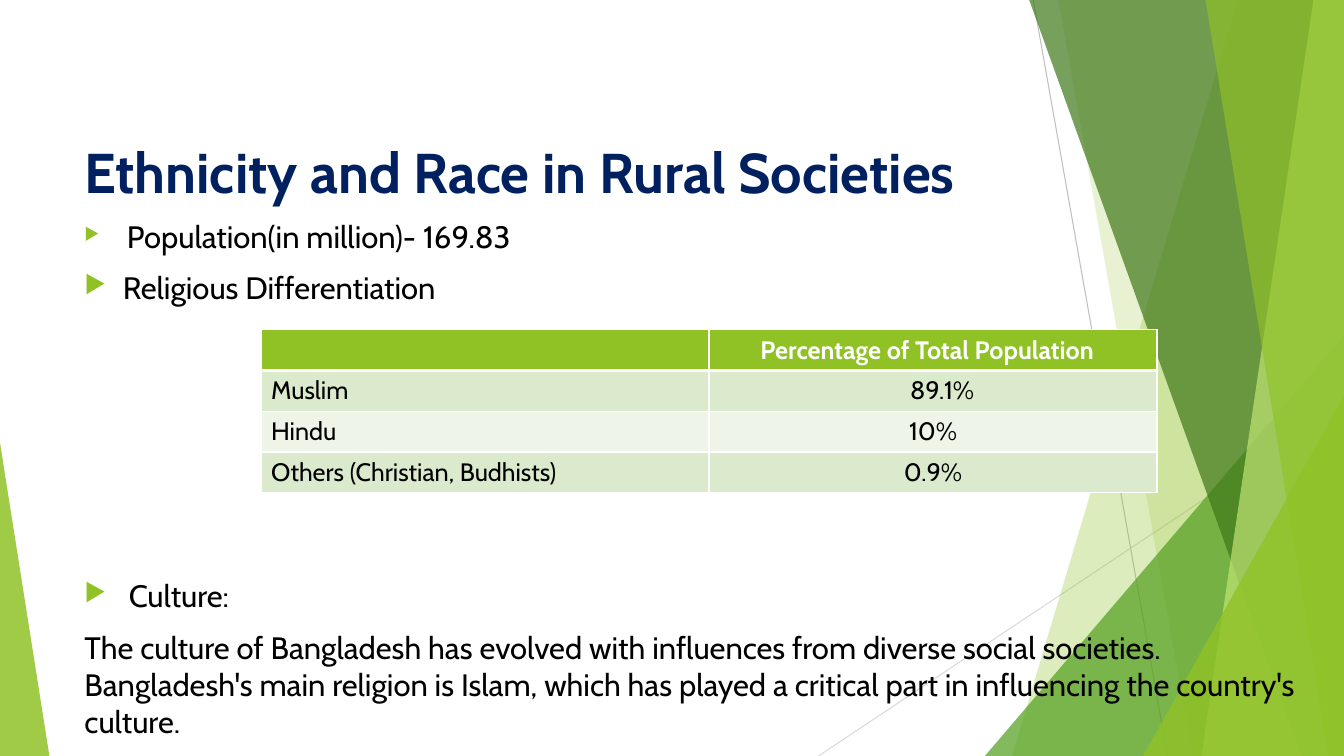
from dataclasses import dataclass

from lxml import etree
from pptx import Presentation
from pptx.dml.color import RGBColor
from pptx.enum.shapes import MSO_CONNECTOR, MSO_SHAPE
from pptx.enum.text import MSO_ANCHOR, PP_ALIGN
from pptx.oxml.ns import qn
from pptx.util import Emu, Inches, Pt

STRAIGHT = MSO_CONNECTOR.STRAIGHT
TRIANGLE = MSO_SHAPE.ISOSCELES_TRIANGLE
MIDDLE = MSO_ANCHOR.MIDDLE
LEFT, CENTER = PP_ALIGN.LEFT, PP_ALIGN.CENTER

FONT = "Cabin"
WHITE = RGBColor(0xFF, 0xFF, 0xFF)
BLACK = RGBColor(0x00, 0x00, 0x00)
NAVY = RGBColor(0x00, 0x20, 0x60)
LIME = RGBColor(0x90, 0xC2, 0x26)
GREEN = RGBColor(0x54, 0xA0, 0x21)
FOREST = RGBColor(0x3F, 0x78, 0x19)
PALE_LIME = RGBColor(0xC0, 0xE4, 0x74)
GREY = RGBColor(0xBF, 0xBF, 0xBF)
LIGHT_GREY = RGBColor(0xD9, 0xD9, 0xD9)
ROW_TINTS = (RGBColor(0xDB, 0xE9, 0xCD), RGBColor(0xEE, 0xF4, 0xE8))

SLIDE_WIDTH, SLIDE_HEIGHT = Inches(13.333), Inches(7.5)
TEXT_LEFT, TEXT_WIDTH = 5.55, 91.65
BODY_SIZE = 22.1


def across(share: float) -> Emu:
    """Percentage of the slide's width."""
    return Emu(round(SLIDE_WIDTH * share / 100))


def down(share: float) -> Emu:
    """Percentage of the slide's height."""
    return Emu(round(SLIDE_HEIGHT * share / 100))


@dataclass
class Ray:
    start: tuple[float, float]
    end: tuple[float, float]
    color: RGBColor


@dataclass
class Band:
    """Full-height strip from a slanted left edge to the slide's right side."""
    head: float
    foot: float
    color: RGBColor
    opacity: int


@dataclass
class Corner:
    """Right triangle standing on the slide's bottom edge."""
    left: float
    top: float
    width: float
    tip: float
    color: RGBColor
    opacity: int


@dataclass
class Line:
    text: str
    size: float = BODY_SIZE
    color: RGBColor = BLACK
    bold: bool = False
    indent: float = 0
    bullet: int = 0


@dataclass
class CellText:
    text: str
    align: PP_ALIGN = LEFT
    margin: float = 0.1


RAYS = [Ray((76.88, 0), (86.87, 100), GREY),
        Ray((100, 53.73), (60.9, 100), LIGHT_GREY)]
FACETS = [
    Band(92.1, 75.3, LIME, 30),
    Band(78.75, 88.73, LIME, 20),
    Corner(73.28, 44.4, 26.72, 1, GREEN, 72),
    Band(76.58, 96.83, FOREST, 70),
    Band(97.73, 89.4, PALE_LIME, 70),
    Band(89.7, 98.85, LIME, 65),
    Corner(85.05, 52.4, 14.95, 1, LIME, 80),
    Corner(0, 58.53, 3.68, 0, LIME, 85),
]
TITLE = [Line("Ethnicity and Race in Rural Societies", 40, NAVY, True)]
POPULATION = [Line("Population(in million)- 169.83", indent=0.42, bullet=55),
              Line("Religious Differentiation", indent=0.38, bullet=80)]
CULTURE = [
    Line("Culture:", indent=0.44, bullet=80),
    Line("The culture of Bangladesh has evolved with influences from diverse "
         "social societies. Bangladesh's main religion is Islam, which has "
         "played a critical part in influencing the country's culture."),
]
RELIGIONS = [
    [CellText(""), CellText("Percentage of Total Population", margin=0.51)],
    [CellText("Muslim"), CellText("89.1%", CENTER, 0.28)],
    [CellText("Hindu"), CellText("10%", CENTER)],
    [CellText("Others (Christian, Budhists)"), CellText("0.9%", CENTER)],
]


def draw_ray(page, ray: Ray) -> None:
    line = page.shapes.add_connector(STRAIGHT, across(ray.start[0]), down(ray.start[1]),
                                     across(ray.end[0]), down(ray.end[1]))
    line.line.color.rgb = ray.color
    line.line.width = Pt(0.75)
    etree.SubElement(line._element.spPr, qn("a:effectLst"))


def draw_facet(page, facet: Band | Corner) -> None:
    if isinstance(facet, Band):
        outline = page.shapes.build_freeform(across(facet.head), 0)
        outline.add_line_segments([(across(100), 0), (across(100), down(100)),
                                   (across(facet.foot), down(100))], close=True)
        shape = outline.convert_to_shape()
    else:
        shape = page.shapes.add_shape(TRIANGLE, across(facet.left), down(facet.top),
                                      across(facet.width), down(100 - facet.top))
        shape.adjustments[0] = facet.tip
    shape.shadow.inherit = False
    shape.line.fill.background()
    shape.fill.solid()
    shape.fill.fore_color.rgb = facet.color
    tint = shape._element.spPr.find(qn("a:solidFill"))[0]
    etree.SubElement(tint, qn("a:alpha"), val=str(facet.opacity * 1000))


def style_font(font, size: float, color: RGBColor, bold: bool) -> None:
    font.name, font.size, font.bold = FONT, Pt(size), bold
    font.color.rgb = color


def add_bullet(para, percent: int, indent: float) -> None:
    props = para._p.get_or_add_pPr()
    props.set("marL", str(Inches(indent)))
    props.set("indent", str(-Inches(indent)))
    tint = etree.SubElement(props, qn("a:buClr"))
    etree.SubElement(tint, qn("a:srgbClr"), val=str(LIME))
    etree.SubElement(props, qn("a:buSzPct"), val=str(percent * 1000))
    etree.SubElement(props, qn("a:buChar"), char="▶")


def draw_text(page, top: float, height: float, lines: list[Line]):
    box = page.shapes.add_textbox(across(TEXT_LEFT), down(top),
                                  across(TEXT_WIDTH), down(height))
    frame = box.text_frame
    frame.word_wrap = True
    for number, line in enumerate(lines):
        para = frame.add_paragraph() if number else frame.paragraphs[0]
        if line.bullet:
            add_bullet(para, line.bullet, line.indent)
        if number:
            para.space_before = Pt(10)
        span = para.add_run()
        span.text = line.text
        style_font(span.font, line.size, line.color, line.bold)
    return box


def add_borders(cell, bottom: float) -> None:
    props = cell._tc.get_or_add_tcPr()
    for side, width in (("L", 1), ("R", 1), ("T", 1), ("B", bottom)):
        edge = etree.SubElement(props, qn(f"a:ln{side}"), w=str(Pt(width)))
        fill = etree.SubElement(edge, qn("a:solidFill"))
        etree.SubElement(fill, qn("a:srgbClr"), val=str(WHITE))


def draw_table(page, rows: list[list[CellText]]) -> None:
    table = page.shapes.add_table(len(rows), len(rows[0]), across(19.43), down(43.6),
                                  across(66.66), down(5.4 * len(rows))).table
    for row, entries in enumerate(rows):
        header = row == 0
        for column, entry in enumerate(entries):
            cell = table.cell(row, column)
            add_borders(cell, 3 if header else 1)
            cell.fill.solid()
            cell.fill.fore_color.rgb = LIME if header else ROW_TINTS[(row - 1) % 2]
            cell.margin_left = Inches(entry.margin)
            para = cell.text_frame.paragraphs[0]
            para.alignment = entry.align
            if entry.text:
                span = para.add_run()
                span.text = entry.text
                style_font(span.font, 18, WHITE if header else BLACK, header)


def main() -> None:
    deck = Presentation()
    deck.slide_width, deck.slide_height = SLIDE_WIDTH, SLIDE_HEIGHT
    page = deck.slides.add_slide(deck.slide_layouts[6])

    # Green facets behind the content
    for ray in RAYS:
        draw_ray(page, ray)
    for facet in FACETS:
        draw_facet(page, facet)

    # Title, points and table
    draw_text(page, 17.2, 10.93, TITLE).text_frame.vertical_anchor = MIDDLE
    draw_text(page, 28.13, 13.6, POPULATION)
    draw_text(page, 75.67, 22.67, CULTURE)
    draw_table(page, RELIGIONS)
    deck.save("out.pptx")


if __name__ == "__main__":
    main()
